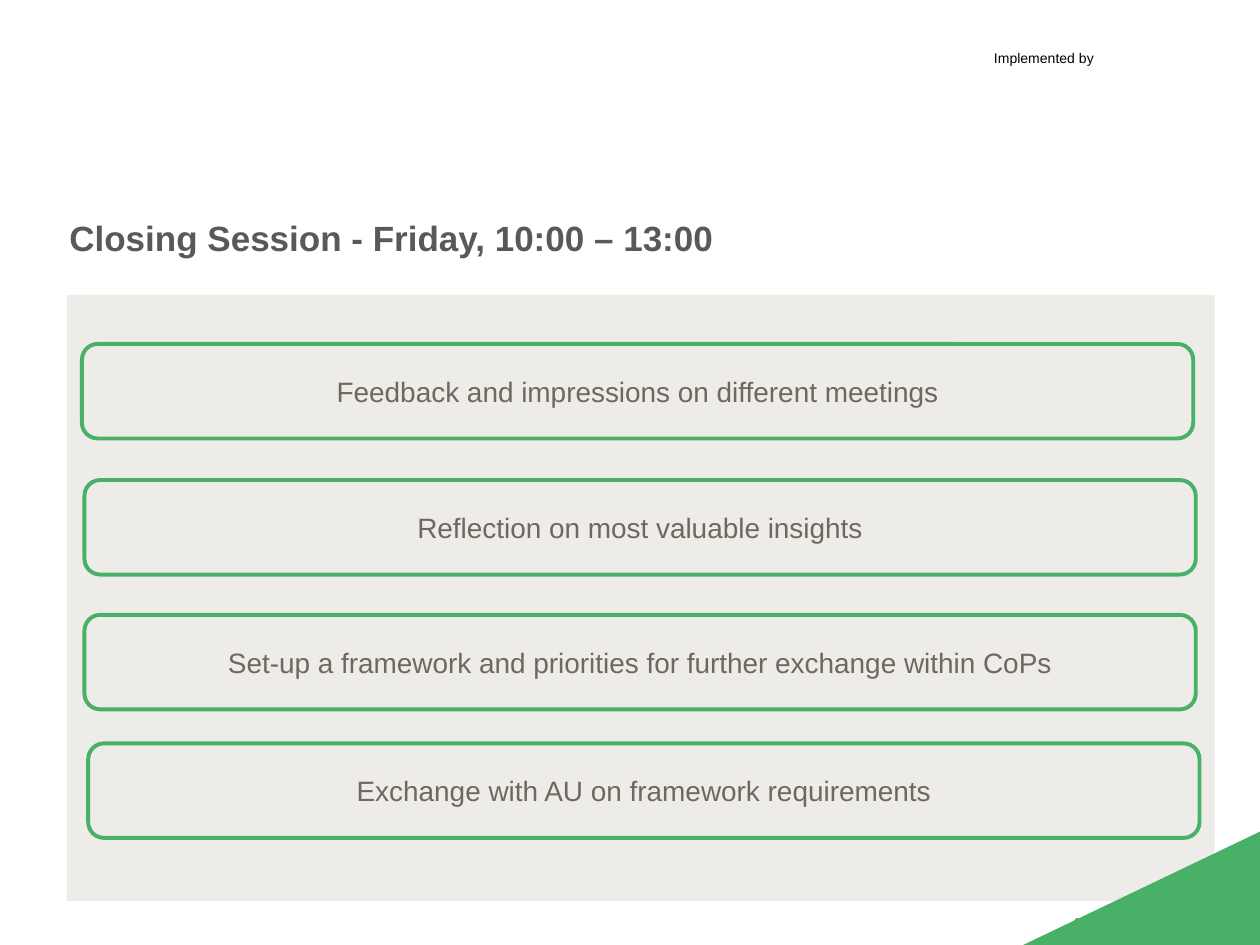
from lxml import etree
from pptx import Presentation
from pptx.dml.color import RGBColor
from pptx.enum import shapes, text
from pptx.oxml.ns import qn
from pptx.util import Inches, Pt

GREEN = RGBColor(0x48, 0xB1, 0x67)
PANEL = RGBColor(0xEC, 0xEA, 0xE6)
TITLE_GREY = RGBColor(0x59, 0x59, 0x59)
BROWN = RGBColor(0x71, 0x67, 0x5C)
NUMBER_BROWN = RGBColor(0x6E, 0x64, 0x52)
BLACK = RGBColor(0, 0, 0)

AGENDA_WIDTH, AGENDA_HEIGHT = 8.82, 0.75
AGENDA = [
    (0.65, 2.73, "Feedback and impressions on different meetings"),
    (0.67, 3.81, "Reflection on most valuable insights"),
    (0.67, 4.88, "Set-up a framework and priorities for further exchange within CoPs"),
    (0.70, 5.90, "Exchange with AU on framework requirements"),
]


class SlideBuilder:
    def __init__(self, slide, font="Arial"):
        self.slide = slide
        self.font = font

    def set_text(self, frame, words, size, color, bold=False, font=None,
                 align=text.PP_ALIGN.LEFT, anchor=text.MSO_ANCHOR.TOP):
        frame.word_wrap = True
        frame.auto_size = text.MSO_AUTO_SIZE.NONE
        frame.vertical_anchor = anchor
        paragraph = frame.paragraphs[0]
        paragraph.alignment = align
        run = paragraph.add_run()
        run.text = words
        run.font.name = font or self.font
        run.font.size = Pt(size)
        run.font.bold = bold
        run.font.color.rgb = color

    def title(self, box, words):
        title = self.slide.shapes.title
        title.left, title.top, title.width, title.height = map(Inches, box)
        self.set_text(title.text_frame, words, 20, TITLE_GREY, bold=True)

    def label(self, box, words, size, color, font=None):
        label = self.slide.shapes.add_textbox(*map(Inches, box))
        self.set_text(label.text_frame, words, size, color, font=font)

    def filled(self, kind, box, color, rotation=0, opacity=100):
        """Add a borderless shape; opacity is a percentage."""
        shape = self.slide.shapes.add_shape(kind, *map(Inches, box))
        shape.shadow.inherit = False
        shape.rotation = rotation
        shape.fill.solid()
        shape.fill.fore_color.rgb = color
        shape.line.fill.background()
        if opacity < 100:
            rgb = shape.element.spPr.find(qn("a:solidFill")).find(qn("a:srgbClr"))
            etree.SubElement(rgb, qn("a:alpha")).set("val", str(opacity * 1000))

    def agenda_item(self, left, top, words):
        box = map(Inches, (left, top, AGENDA_WIDTH, AGENDA_HEIGHT))
        item = self.slide.shapes.add_shape(
            shapes.MSO_SHAPE.ROUNDED_RECTANGLE, *box)
        item.shadow.inherit = False
        item.fill.background()
        item.line.color.rgb = GREEN
        item.line.width = Pt(2.25)
        self.set_text(item.text_frame, words, 16, BROWN,
                      align=text.PP_ALIGN.CENTER, anchor=text.MSO_ANCHOR.MIDDLE)


def main():
    deck = Presentation()
    deck.slide_width, deck.slide_height = Inches(10), Inches(7.5)
    builder = SlideBuilder(deck.slides.add_slide(deck.slide_layouts[5]))

    builder.label((8.42, 7.2, 1.01, 0.27), "11", 10, NUMBER_BROWN, "Arial Narrow")
    builder.label((7.79, 0.34, 1.17, 0.24), "Implemented by", 8, BLACK)
    builder.filled(shapes.MSO_SHAPE.RECTANGLE, (0.53, 2.34, 9.11, 4.81),
                   PANEL, opacity=90)
    builder.filled(shapes.MSO_SHAPE.RIGHT_TRIANGLE, (8.61, 6.11, 0.9, 1.88),
                   GREEN, rotation=270)
    builder.title((0.45, 1.67, 6.49, 0.46), "Closing Session - Friday, 10:00 – 13:00")
    for left, top, words in AGENDA:
        builder.agenda_item(left, top, words)

    deck.save("out.pptx")


if __name__ == "__main__":
    main()
